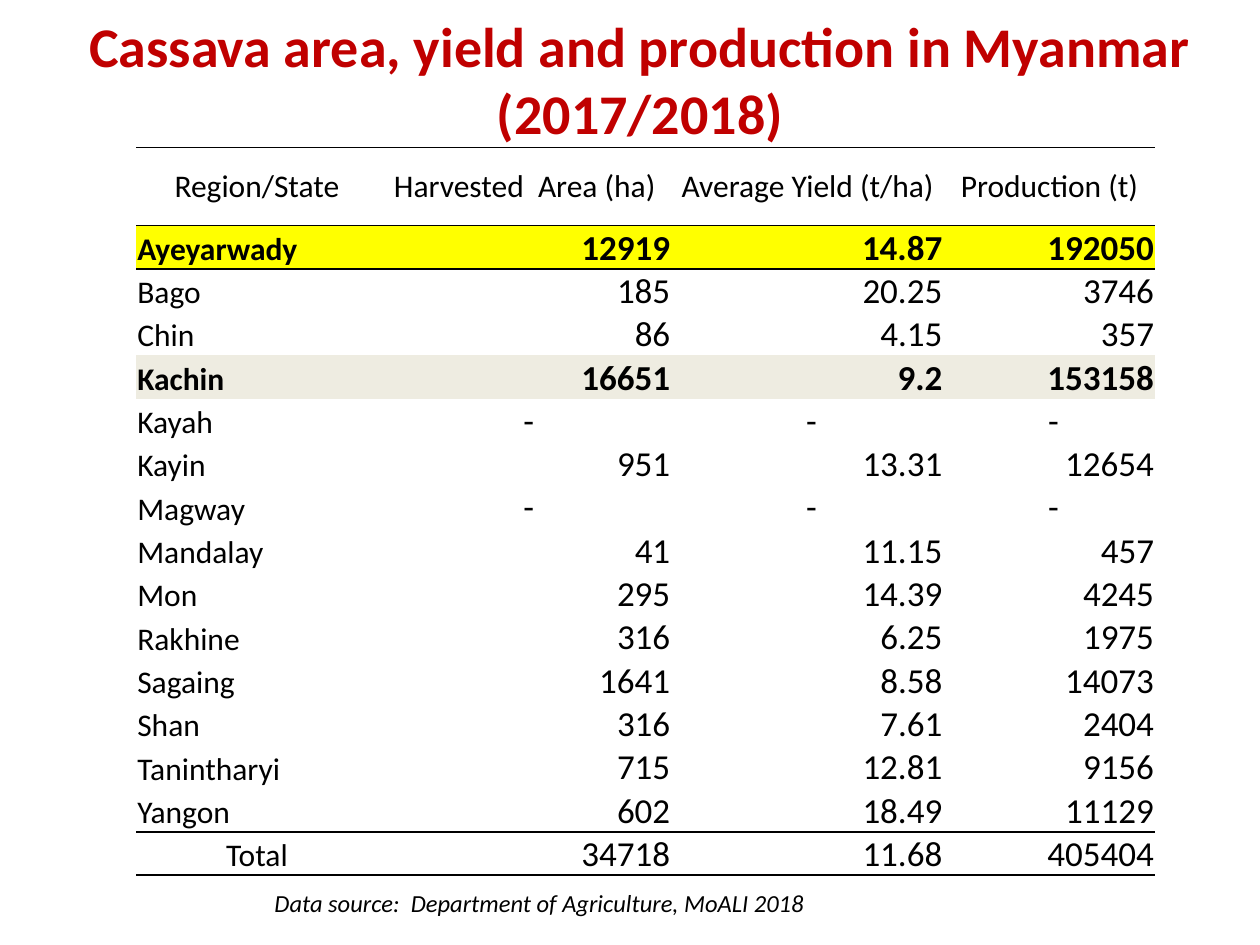
from lxml.etree import SubElement
from pptx import Presentation
from pptx.dml.color import RGBColor
from pptx.enum.text import MSO_ANCHOR as Anchor, PP_ALIGN as Align
from pptx.oxml.ns import qn
from pptx.util import Inches, Pt

COLORS = {"title": "C00000", "ink": "000000", "top": "FFFF00", "second": "EEECE1"}
FONT = "Calibri"
HEADINGS = ["Region/State", "Harvested  Area (ha)", "Average Yield (t/ha)", "Production (t)"]
NONE = " -"
REGIONS = [
    ["Ayeyarwady", "12919", "14.87", "192050"],
    ["Bago", "185", "20.25", "3746"],
    ["Chin", "86", "4.15", "357"],
    ["Kachin", "16651", "9.2", "153158"],
    ["Kayah", NONE, NONE, NONE],
    ["Kayin", "951", "13.31", "12654"],
    ["Magway", NONE, NONE, NONE],
    ["Mandalay", "41", "11.15", "457"],
    ["Mon", "295", "14.39", "4245"],
    ["Rakhine", "316", "6.25", "1975"],
    ["Sagaing", "1641", "8.58", "14073"],
    ["Shan", "316", "7.61", "2404"],
    ["Tanintharyi", "715", "12.81", "9156"],
    ["Yangon", "602", "18.49", "11129"],
]
TOTAL = ["Total", "34718", "11.68", "405404"]
HIGHLIGHTS = {"Ayeyarwady": "top", "Kachin": "second"}
COLUMN_WIDTHS = [1.92, 2.33, 2.16, 1.68]
HEADING_HEIGHT, ROW_HEIGHT = 0.62, 0.32
CELL_FORMAT = {"margin_left": Inches(0.01), "margin_right": Inches(0.01),
               "margin_top": Inches(0.01), "margin_bottom": 0}


def write(frame, text, size, color="ink", align=Align.LEFT, **style):
    """Put one formatted paragraph in a text frame."""
    paragraph = frame.paragraphs[0]
    paragraph.alignment = align
    run = paragraph.add_run()
    run.text = text
    run.font.color.rgb = RGBColor.from_string(COLORS[color])
    for name, value in {"name": FONT, "size": Pt(size), "bold": False, **style}.items():
        setattr(run.font, name, value)


def set_borders(cell, ruled_sides):
    """Rule the given sides of a cell and clear the others."""
    properties = cell._tc.get_or_add_tcPr()
    for side in "LRTB":
        line = SubElement(properties, qn(f"a:ln{side}"), w=str(Pt(1)))
        if side in ruled_sides:
            ink = SubElement(line, qn("a:solidFill"))
            SubElement(ink, qn("a:srgbClr"), val=COLORS["ink"])
        else:
            SubElement(line, qn("a:noFill"))


def add_title(slide, left, top, width, height):
    frame = slide.shapes.add_textbox(left, top, width, height).text_frame
    frame.word_wrap = True
    frame.vertical_anchor = Anchor.MIDDLE
    write(frame, "Cassava area, yield and production in Myanmar (2017/2018)",
          32, "title", Align.CENTER, bold=True)


def add_cassava_table(slide, left, top, width, height):
    rows = [HEADINGS, *REGIONS, TOTAL]
    table = slide.shapes.add_table(len(rows), len(HEADINGS), left, top, width, height).table
    table.first_row = table.horz_banding = False
    for column, column_width in zip(table.columns, COLUMN_WIDTHS):
        column.width = Inches(column_width)

    # Rules frame the headings, the leading region and the total
    last = len(rows) - 1
    rules = {0: "TB", 1: "TB", 2: "T", last - 1: "B", last: "TB"}
    for r, values in enumerate(rows):
        table.rows[r].height = Inches(ROW_HEIGHT if r else HEADING_HEIGHT)
        highlight = HIGHLIGHTS.get(values[0])
        for c, value in enumerate(values):
            cell = table.cell(r, c)
            for name, setting in CELL_FORMAT.items():
                setattr(cell, name, setting)
            cell.vertical_anchor = Anchor.BOTTOM if r else Anchor.MIDDLE
            set_borders(cell, rules.get(r, ""))
            if highlight:
                cell.fill.solid()
                cell.fill.fore_color.rgb = RGBColor.from_string(COLORS[highlight])
            else:
                cell.fill.background()

            if r == 0 or value in (NONE, "Total"):
                align = Align.CENTER
            else:
                align = Align.RIGHT if c else Align.LEFT
            size = 20 if r and c else 18
            write(cell.text_frame, value, size, align=align, bold=bool(highlight))


def add_data_source(slide, left, top, width, height):
    frame = slide.shapes.add_textbox(left, top, width, height).text_frame
    frame.word_wrap = False
    write(frame, "Data source:  Department of Agriculture, MoALI 2018", 14, italic=True)


def main():
    deck = Presentation()
    deck.slide_width, deck.slide_height = Inches(10), Inches(7.5)
    slide = deck.slides.add_slide(deck.slide_layouts[6])
    add_title(slide, Inches(0.58), Inches(0), Inches(9), Inches(1.25))
    add_cassava_table(slide, Inches(1.08), Inches(1.17), Inches(8.08), Inches(5.75))
    add_data_source(slide, Inches(2.08), Inches(7), Inches(4.45), Inches(0.34))
    deck.save("out.pptx")


if __name__ == "__main__":
    main()
